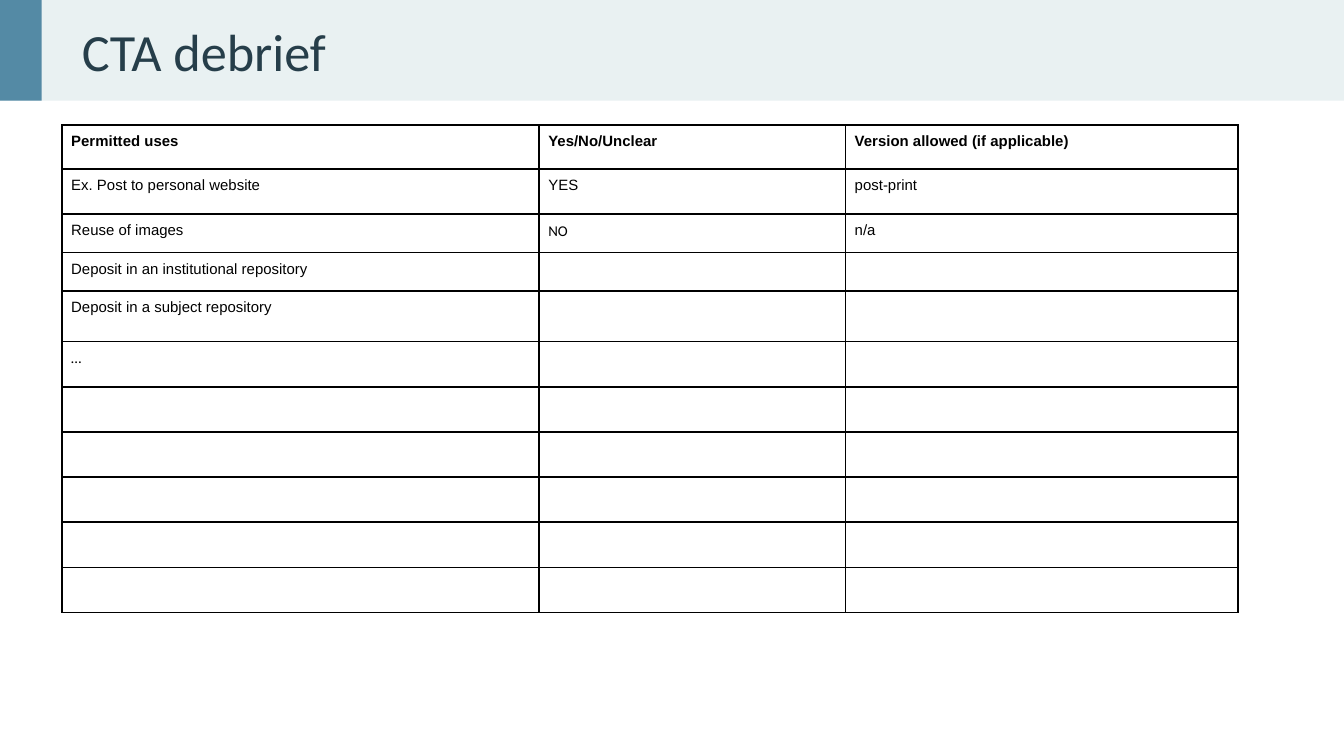
from dataclasses import dataclass

from lxml import etree
from pptx import Presentation
from pptx import util as u
from pptx.dml.color import RGBColor
from pptx.enum import shapes, text
from pptx.oxml.ns import qn


@dataclass(frozen=True)
class Theme:
    band: str = "E9F1F2"
    accent: str = "548AA5"
    heading: str = "263E4A"
    ink: str = "000000"
    heading_font: str = "Calibri"
    body_font: str = "Arial"
    heading_size: float = 28
    body_size: float = 8
    rule_width: float = 1


THEME = Theme()
WIDTH = 10
HEIGHT = WIDTH * 9 / 16
COLUMN_SHARES = [3.55, 2.28, 2.92]
ROW_SHARES = [0.33, 0.34, 0.29, 0.29, 0.38] + [0.34] * 6
USES = [
    ["Permitted uses", "Yes/No/Unclear", "Version allowed (if applicable)"],
    ["Ex. Post to personal website", "YES", "post-print"],
    ["Reuse of images", "NO", "n/a"],
    ["Deposit in an institutional repository"],
    ["Deposit in a subject repository"],
    ["…"],
]
CALIBRI_ENTRIES = {"NO", "…"}


def write(frame, wording, *, font, size, color, bold=False, spacing=1.0):
    paragraph = frame.paragraphs[0]
    paragraph.alignment = text.PP_ALIGN.LEFT
    paragraph.line_spacing = spacing
    if not wording:
        end = etree.SubElement(paragraph._p, qn("a:endParaRPr"))
        end.set("sz", str(int(size * 100)))
        return
    run = paragraph.add_run()
    run.text = wording
    run.font.name = font
    run.font.size = u.Pt(size)
    run.font.bold = bold
    run.font.color.rgb = RGBColor.from_string(color)


def set_insets(target, across, down):
    target.margin_left = target.margin_right = u.Inches(across)
    target.margin_top = target.margin_bottom = u.Inches(down)


def rule_cell(cell):
    properties = cell._tc.get_or_add_tcPr()
    for position, side in enumerate(("a:lnL", "a:lnR", "a:lnT", "a:lnB")):
        line = etree.Element(qn(side), w=str(u.Pt(THEME.rule_width)))
        fill = etree.SubElement(line, qn("a:solidFill"))
        etree.SubElement(fill, qn("a:srgbClr"), val=THEME.ink)
        properties.insert(position, line)


def add_band(slide, box, color):
    band = slide.shapes.add_shape(
        shapes.MSO_SHAPE.RECTANGLE, *map(u.Inches, box))
    band.shadow.inherit = False
    band.fill.solid()
    band.fill.fore_color.rgb = RGBColor.from_string(color)
    band.line.fill.background()


def build_header(slide, box, wording, accent_width=0.31):
    left, top, width, height = box
    add_band(slide, box, THEME.band)
    add_band(slide, (left, top, accent_width, height), THEME.accent)
    heading = slide.shapes.title
    heading.left, heading.top = u.Inches(left + accent_width), u.Inches(top)
    heading.width = u.Inches(width - accent_width)
    heading.height = u.Inches(height)
    slide.shapes._spTree.append(heading._element)
    frame = heading.text_frame
    frame.word_wrap = True
    frame.auto_size = text.MSO_AUTO_SIZE.NONE
    frame.vertical_anchor = text.MSO_ANCHOR.MIDDLE
    set_insets(frame, 0.3, 0.05)
    write(frame, wording, font=THEME.heading_font,
          size=THEME.heading_size, color=THEME.heading)


def build_uses_table(slide, box):
    width, height = box[2:]
    uses = slide.shapes.add_table(
        len(ROW_SHARES), len(COLUMN_SHARES), *map(u.Inches, box)).table
    uses.first_row = uses.horz_banding = False
    for column, share in zip(uses.columns, COLUMN_SHARES):
        column.width = u.Inches(width * share / sum(COLUMN_SHARES))
    for row_number, share in enumerate(ROW_SHARES):
        uses.rows[row_number].height = u.Inches(height * share / sum(ROW_SHARES))
        entries = USES[row_number] if row_number < len(USES) else []
        for column_number in range(len(COLUMN_SHARES)):
            entry = entries[column_number] if column_number < len(entries) else ""
            cell = uses.cell(row_number, column_number)
            cell.fill.background()
            set_insets(cell, 0.07, 0.05)
            rule_cell(cell)
            font = THEME.heading_font if entry in CALIBRI_ENTRIES else THEME.body_font
            write(cell.text_frame, entry, font=font, size=THEME.body_size,
                  color=THEME.ink, bold=row_number == 0, spacing=1.07)


def main():
    deck = Presentation()
    deck.slide_width, deck.slide_height = u.Inches(WIDTH), u.Inches(HEIGHT)
    slide = deck.slides.add_slide(deck.slide_layouts.get_by_name("Title Only"))
    build_header(slide, (0, 0, WIDTH, 0.75), "CTA debrief")
    build_uses_table(slide, (0.46, 0.93, 8.75, 3.63))
    deck.save("out.pptx")


if __name__ == "__main__":
    main()
